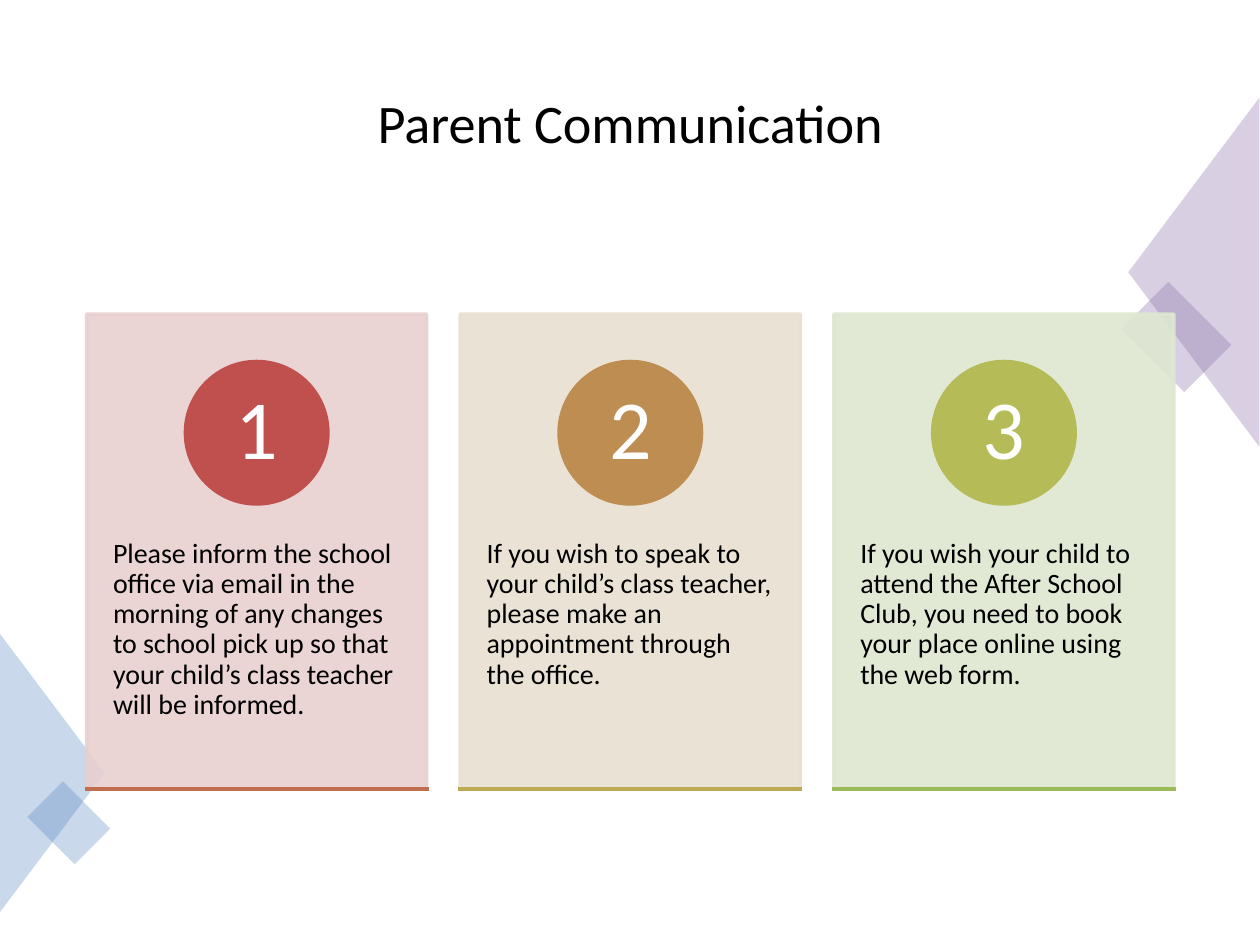
import pptx
import pptx.dml.color
import pptx.enum.shapes
import pptx.enum.text
import pptx.oxml.ns
import pptx.util
from lxml import etree

Pt = pptx.util.Pt
SHAPE = pptx.enum.shapes.MSO_SHAPE
ALIGN = pptx.enum.text.PP_ALIGN
ANCHOR = pptx.enum.text.MSO_ANCHOR
qn = pptx.oxml.ns.qn

COLORS = {"black": "000000", "white": "FFFFFF", "purple": "8064A2", "blue": "4F81BD"}
TITLE = "Parent Communication"
# text, card colour, circle colour, base line colour
CARDS = [
    ("Please inform the school office via email in the morning of any changes "
     "to school pick up so that your child’s class teacher will be informed.",
     "E8D0D0", "C0504D", "BF6F4F"),
    ("If you wish to speak to your child’s class teacher, please make an "
     "appointment through the office.",
     "E8E1D1", "BE8D52", "BDA954"),
    ("If you wish your child to attend the After School Club, you need to book "
     "your place online using the web form.",
     "DEE7D1", "B5BC57", "9BBB59"),
]
# shape, left, top, width, height, rotation, colour
DECOR = [
    (SHAPE.RECTANGLE, 646.6, 173.5, 51.1, 38.2, 45, "purple"),
    (SHAPE.ISOSCELES_TRIANGLE, 582.5, 118.1, 199.4, 74.9, 270, "purple"),
    (SHAPE.ISOSCELES_TRIANGLE, -49.7, 411.8, 159.1, 59.8, 90, "blue"),
    (SHAPE.RECTANGLE, 20.2, 455.8, 38.2, 28.8, 45, "blue"),
]
CARD_LEFT, CARD_TOP, CARD_W, CARD_H, PITCH = 49.5, 179.5, 194.4, 271.4, 213.5
CIRCLE, CIRCLE_TOP = 81.4, 206.6
BODY_TOP, BODY_H = 282.2, 162.7
OUTLINE = 2

prs = pptx.Presentation()
prs.slide_width, prs.slide_height = Pt(720), Pt(540)
s = prs.slides.add_slide(prs.slide_layouts[6])


def rgb(value):
    return pptx.dml.color.RGBColor.from_string(value)


def set_alpha(shape, percent):
    """Make the fill, and the outline if there is one, partly transparent."""
    for color in shape._element.spPr.iter(qn("a:srgbClr")):
        etree.SubElement(color, qn("a:alpha")).set("val", str(percent * 1000))


def add_shape(kind, x, y, w, h, color, outline=True, alpha=None, rotation=0):
    sp = s.shapes.add_shape(kind, Pt(x), Pt(y), Pt(w), Pt(h))
    sp.shadow.inherit = False
    sp.rotation = rotation
    sp.fill.solid()
    sp.fill.fore_color.rgb = rgb(color)
    if outline:
        sp.line.color.rgb = rgb(color)
        sp.line.width = Pt(OUTLINE)
    else:
        sp.line.fill.background()
    if alpha:
        set_alpha(sp, alpha)


def add_line(x1, x2, y, color):
    line = s.shapes.add_connector(
        pptx.enum.shapes.MSO_CONNECTOR.STRAIGHT, Pt(x1), Pt(y), Pt(x2), Pt(y))
    line.line.color.rgb = rgb(color)
    line.line.width = Pt(OUTLINE)
    etree.SubElement(line._element.spPr, qn("a:effectLst"))


def add_text(text, x, y, w, h, size=16, color="black", align=ALIGN.LEFT,
             anchor=ANCHOR.TOP, inset=(7.2, 3.6), spacing=1.0):
    tf = s.shapes.add_textbox(Pt(x), Pt(y), Pt(w), Pt(h)).text_frame
    tf.word_wrap = True
    tf.vertical_anchor = anchor
    tf.margin_left = tf.margin_right = Pt(inset[0])
    tf.margin_top = tf.margin_bottom = Pt(inset[1])
    p = tf.paragraphs[0]
    p.alignment = align
    p.line_spacing = spacing
    r = p.add_run()
    r.text = text
    r.font.name = "Calibri"
    r.font.size = Pt(size)
    r.font.color.rgb = rgb(COLORS[color])


add_text(TITLE, 38.2, 25.2, 643.6, 89.3, size=31, align=ALIGN.CENTER,
         anchor=ANCHOR.MIDDLE)

for kind, x, y, w, h, rotation, color in DECOR:
    add_shape(kind, x, y, w, h, COLORS[color], outline=False, alpha=30,
              rotation=rotation)

for i, (text, card, circle, base) in enumerate(CARDS):
    x = CARD_LEFT + i * PITCH
    circle_x = x + (CARD_W - CIRCLE) / 2
    add_shape(SHAPE.RECTANGLE, x, CARD_TOP, CARD_W, CARD_H, card, alpha=90)
    add_text(text, x, BODY_TOP, CARD_W, BODY_H, inset=(15.1, 25.9), spacing=0.9)
    add_shape(SHAPE.OVAL, circle_x, CIRCLE_TOP, CIRCLE, CIRCLE, circle)
    add_text(str(i + 1), circle_x + 11.9, CIRCLE_TOP + 11.9, 57.6, 57.6, size=48,
             color="white", align=ALIGN.CENTER, anchor=ANCHOR.MIDDLE,
             inset=(6.5, 0.7), spacing=0.9)
    add_line(x - OUTLINE / 2, x + CARD_W + OUTLINE / 2, CARD_TOP + CARD_H, base)

prs.save("out.pptx")
